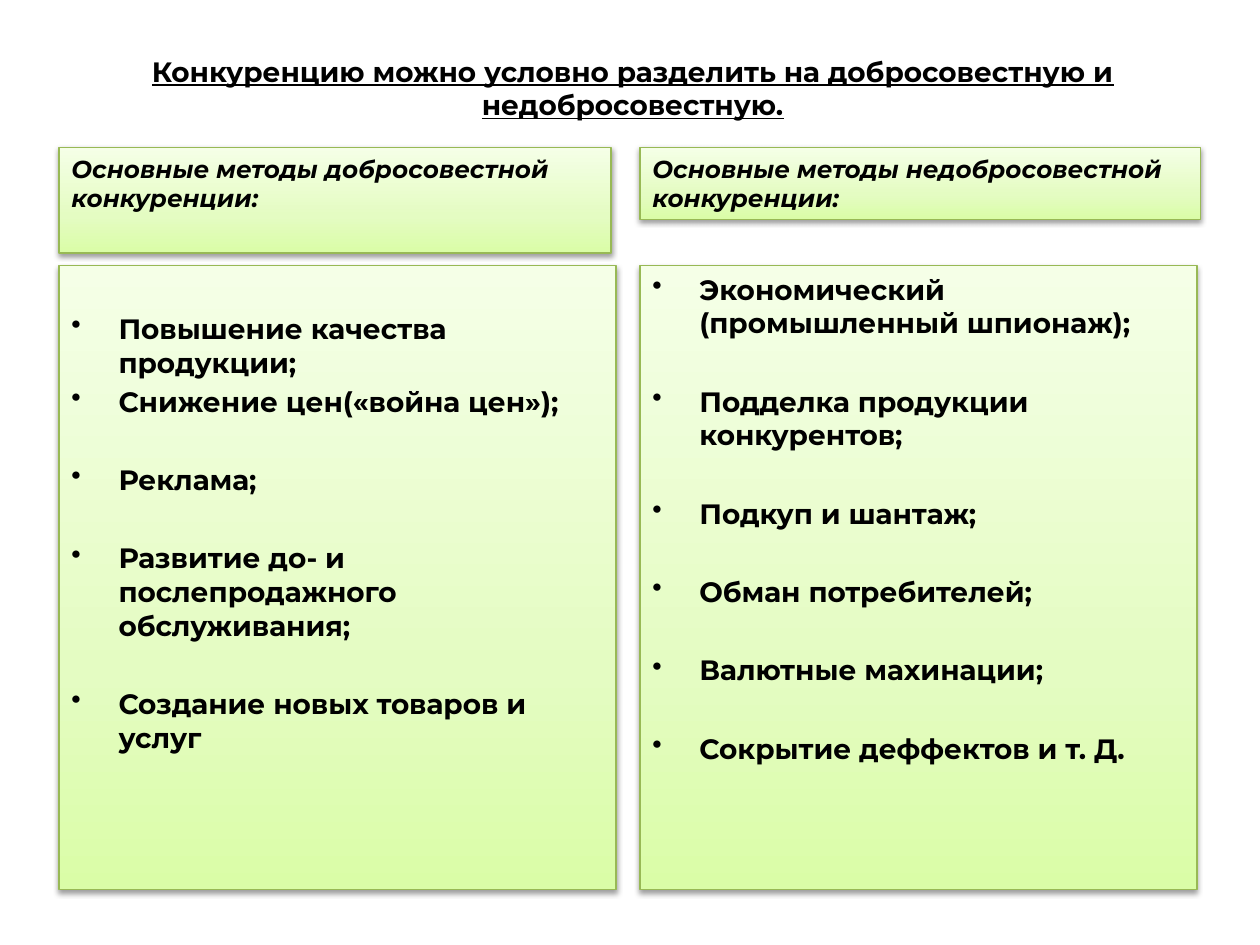
from copy import deepcopy
from dataclasses import dataclass

from lxml import etree
from pptx import Presentation
from pptx.dml.color import RGBColor
from pptx.enum.shapes import MSO_SHAPE
from pptx.enum.text import MSO_ANCHOR, PP_ALIGN
from pptx.oxml.ns import qn
from pptx.util import Cm, Pt

RECTANGLE = MSO_SHAPE.RECTANGLE
TOP = MSO_ANCHOR.TOP
MIDDLE = MSO_ANCHOR.MIDDLE
LEFT = PP_ALIGN.LEFT
CENTER = PP_ALIGN.CENTER

BLACK = RGBColor(0x00, 0x00, 0x00)
BORDER = RGBColor(0x98, 0xB9, 0x55)
GRADIENT = (
    (0, RGBColor(0xDA, 0xFD, 0xA7)),
    (0.35, RGBColor(0xE4, 0xFC, 0xC2)),
    (1, RGBColor(0xF5, 0xFF, 0xE7)),
)
FONT = "Montserrat"
LEFT_COLUMN = 1.19
RIGHT_COLUMN = 12.9
HEADER_TOP = 2.97
LIST_TOP = 5.36
LIST_WIDTH = 11.23
LIST_HEIGHT = 12.57
TIGHT = 3.2
WIDE = 25.6


@dataclass(frozen=True)
class Line:
    text: str
    gap: float = 0


@dataclass(frozen=True)
class Panel:
    left: float
    top: float
    width: float
    height: float
    lines: tuple[Line, ...]
    size: int
    italic: bool = False
    bulleted: bool = False
    top_inset: float = 0.13


PANELS = (
    Panel(LEFT_COLUMN, LIST_TOP, LIST_WIDTH, LIST_HEIGHT, (
        Line("Повышение качества продукции;"),
        Line("Снижение цен(«война цен»);", TIGHT),
        Line("Реклама;", WIDE),
        Line("Развитие до- и послепродажного обслуживания;", WIDE),
        Line("Создание новых товаров и услуг", WIDE),
    ), 16, bulleted=True, top_inset=0.92),
    Panel(RIGHT_COLUMN, LIST_TOP, LIST_WIDTH, LIST_HEIGHT, (
        Line("Экономический (промышленный шпионаж);"),
        Line("Подделка продукции конкурентов;", WIDE),
        Line("Подкуп и шантаж;", WIDE),
        Line("Обман потребителей;", WIDE),
        Line("Валютные махинации;", WIDE),
        Line("Сокрытие деффектов и т. Д.", WIDE),
    ), 16, bulleted=True),
    Panel(LEFT_COLUMN, HEADER_TOP, 11.13, 2.13, (
        Line("Основные методы добросовестной"),
        Line("конкуренции:"),
    ), 14, italic=True),
    Panel(RIGHT_COLUMN, HEADER_TOP, 11.3, 1.45, (
        Line("Основные методы недобросовестной"),
        Line("конкуренции:"),
    ), 14, italic=True),
)


def add_span(para, text: str, size: int, italic: bool = False, underline: bool = False) -> None:
    span = para.add_run()
    span.text = text
    font = span.font
    font.name = FONT
    font.size = Pt(size)
    font.bold = True
    font.italic = italic
    font.underline = underline
    font.color.rgb = BLACK


def add_bullet(para) -> None:
    properties = para._p.get_or_add_pPr()
    properties.set("marL", str(Cm(0.95)))
    properties.set("indent", str(Cm(-0.95)))
    etree.SubElement(properties, qn("a:buChar")).set("char", "•")


def fill_gradient(shape) -> None:
    shape.fill.gradient()
    shape.fill.gradient_angle = 90
    stop_list = shape._element.spPr.find(".//" + qn("a:gsLst"))
    stop_list.append(deepcopy(stop_list[0]))
    for stop, (position, color) in zip(shape.fill.gradient_stops, GRADIENT):
        stop.position = position
        stop.color.rgb = color


def add_shadow(shape) -> None:
    shape.shadow.inherit = False
    effects = shape._element.spPr.find(qn("a:effectLst"))
    shadow = etree.SubElement(effects, qn("a:outerShdw"), {
        "blurRad": str(Pt(3.1)), "dist": str(Pt(1.6)), "dir": "5400000", "rotWithShape": "0",
    })
    color = etree.SubElement(shadow, qn("a:srgbClr"), {"val": str(BLACK)})
    etree.SubElement(color, qn("a:alpha"), {"val": "38000"})


def draw_panel(page, panel: Panel) -> None:
    shape = page.shapes.add_shape(
        RECTANGLE, Cm(panel.left), Cm(panel.top), Cm(panel.width), Cm(panel.height)
    )
    fill_gradient(shape)
    shape.line.color.rgb = BORDER
    shape.line.width = Pt(0.75)
    add_shadow(shape)
    box = shape.text_frame
    box.word_wrap = True
    box.vertical_anchor = TOP
    box.margin_top = Cm(panel.top_inset)
    for index, line in enumerate(panel.lines):
        para = box.add_paragraph() if index else box.paragraphs[0]
        para.alignment = LEFT
        if line.gap:
            para.space_before = Pt(line.gap)
        if panel.bulleted:
            add_bullet(para)
        add_span(para, line.text, panel.size, italic=panel.italic)


def draw_title(page) -> None:
    box = page.shapes.add_textbox(Cm(1.78), Cm(0.58), Cm(21.95), Cm(2.39)).text_frame
    box.word_wrap = True
    box.vertical_anchor = MIDDLE
    para = box.paragraphs[0]
    para.alignment = CENTER
    add_span(para, "Конкуренцию можно условно разделить на добросовестную и", 16, underline=True)
    para.add_line_break()
    add_span(para, "недобросовестную.", 16, underline=True)


def main() -> None:
    deck = Presentation()
    deck.slide_width = Cm(25.4)
    deck.slide_height = Cm(19.05)
    page = deck.slides.add_slide(deck.slide_layouts[6])
    draw_title(page)
    for panel in PANELS:
        draw_panel(page, panel)
    deck.save("out.pptx")


if __name__ == "__main__":
    main()
